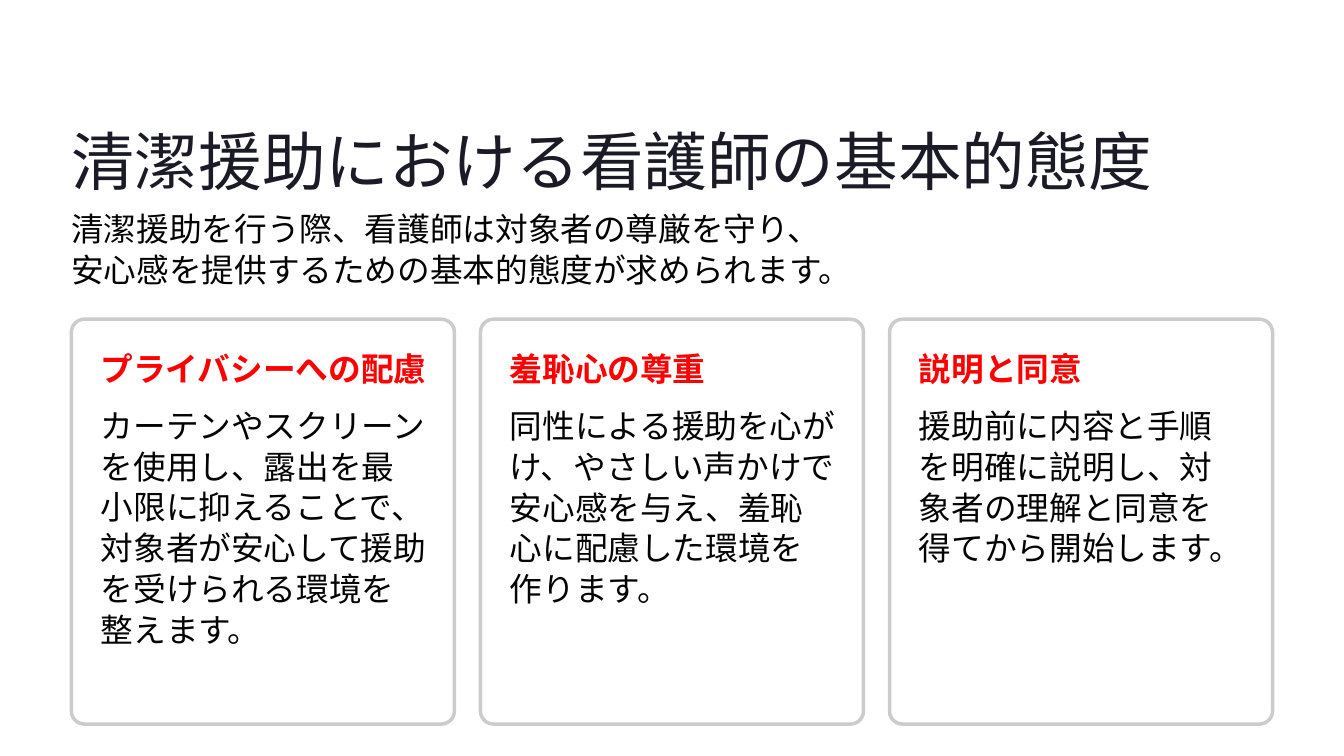
from dataclasses import dataclass

from lxml import etree
from pptx import Presentation
from pptx import util as u
from pptx.dml.color import RGBColor
from pptx.enum import shapes, text
from pptx.oxml.ns import qn


@dataclass(frozen=True)
class Theme:
    head_font: str = "Inter"
    body_font: str = "Karla"
    title: str = "1B1B27"
    body: str = "030303"
    accent: str = "FF0000"
    card: str = "FFFFFF"
    border: str = "CCCCCC"
    title_size: float = 54.5
    text_size: float = 28


class Deck:
    def __init__(self, theme):
        self.theme = theme
        self.prs = Presentation()
        self.prs.slide_width, self.prs.slide_height = u.Inches(16), u.Inches(9)
        self.s = self.prs.slides.add_slide(self.prs.slide_layouts[6])

    def text(self, box, lines, size, font, color, leading, bold=False, wrap=False):
        sp = self.s.shapes.add_textbox(*map(u.Inches, box))
        tf = sp.text_frame
        tf.margin_left = tf.margin_right = tf.margin_top = tf.margin_bottom = 0
        tf.word_wrap = wrap
        tf.vertical_anchor = text.MSO_ANCHOR.TOP
        for i, line in enumerate(lines):
            p = tf.paragraphs[0] if i == 0 else tf.add_paragraph()
            p.alignment = text.PP_ALIGN.LEFT
            p.line_spacing = u.Pt(leading)
            r = p.add_run()
            r.text = line
            r.font.size, r.font.name, r.font.bold = u.Pt(size), font, bold
            r.font.color.rgb = RGBColor.from_string(color)

    def title(self, box, line):
        t = self.theme
        self.text(box, [line], t.title_size, t.head_font, t.title, 68)

    def heading(self, box, line):
        t = self.theme
        self.text(box, [line], t.text_size, t.head_font, t.accent, 34, bold=True)

    def body(self, box, lines, wrap=False):
        t = self.theme
        self.text(box, lines, t.text_size, t.body_font, t.body, 35, wrap=wrap)

    def panel(self, box):
        sp = self.s.shapes.add_shape(
            shapes.MSO_SHAPE.ROUNDED_RECTANGLE, *map(u.Inches, box))
        sp.shadow.inherit = False
        sp.adjustments[0] = 0.034
        sp.fill.solid()
        sp.fill.fore_color.rgb = RGBColor.from_string(self.theme.card)
        # Slightly see-through fill
        clr = sp.fill._xPr.find(qn("a:solidFill"))[0]
        etree.SubElement(clr, qn("a:alpha")).set("val", "95000")
        sp.line.color.rgb = RGBColor.from_string(self.theme.border)
        sp.line.width = u.Pt(3)

    def card(self, left, heading, body, body_height):
        self.panel((left, 3.8, 4.56, 4.82))
        inner = left + 0.35
        # The heading has room for ten full characters on one line
        self.heading((inner, 4.15, 4.1, 0.47), heading)
        # Column measure in points, set for the body line breaks
        self.body((inner, 4.81, 278.9 / 72, body_height), [body], wrap=True)


CARDS = [
    ("プライバシーへの配慮",
     "カーテンやスクリーンを使用し、露出を最小限に抑えることで、"
     "対象者が安心して援助を受けられる環境を整えます。", 2.43),
    ("羞恥心の尊重",
     "同性による援助を心がけ、やさしい声かけで安心感を与え、"
     "羞恥心に配慮した環境を作ります。", 1.95),
    ("説明と同意",
     "援助前に内容と手順を明確に説明し、"
     "対象者の理解と同意を得てから開始します。", 1.95),
]


def main():
    deck = Deck(Theme())

    # Title and introduction
    deck.title((0.85, 1.42, 12.92, 0.95), "清潔援助における看護師の基本的態度")
    deck.body((0.85, 2.47, 14.3, 0.49), [
        "清潔援助を行う際、看護師は対象者の尊厳を守り、",
        "安心感を提供するための基本的態度が求められます。",
    ])

    # Three cards at an equal pitch
    for i, card in enumerate(CARDS):
        deck.card(0.85 + 4.87 * i, *card)

    deck.prs.save("out.pptx")


if __name__ == "__main__":
    main()
